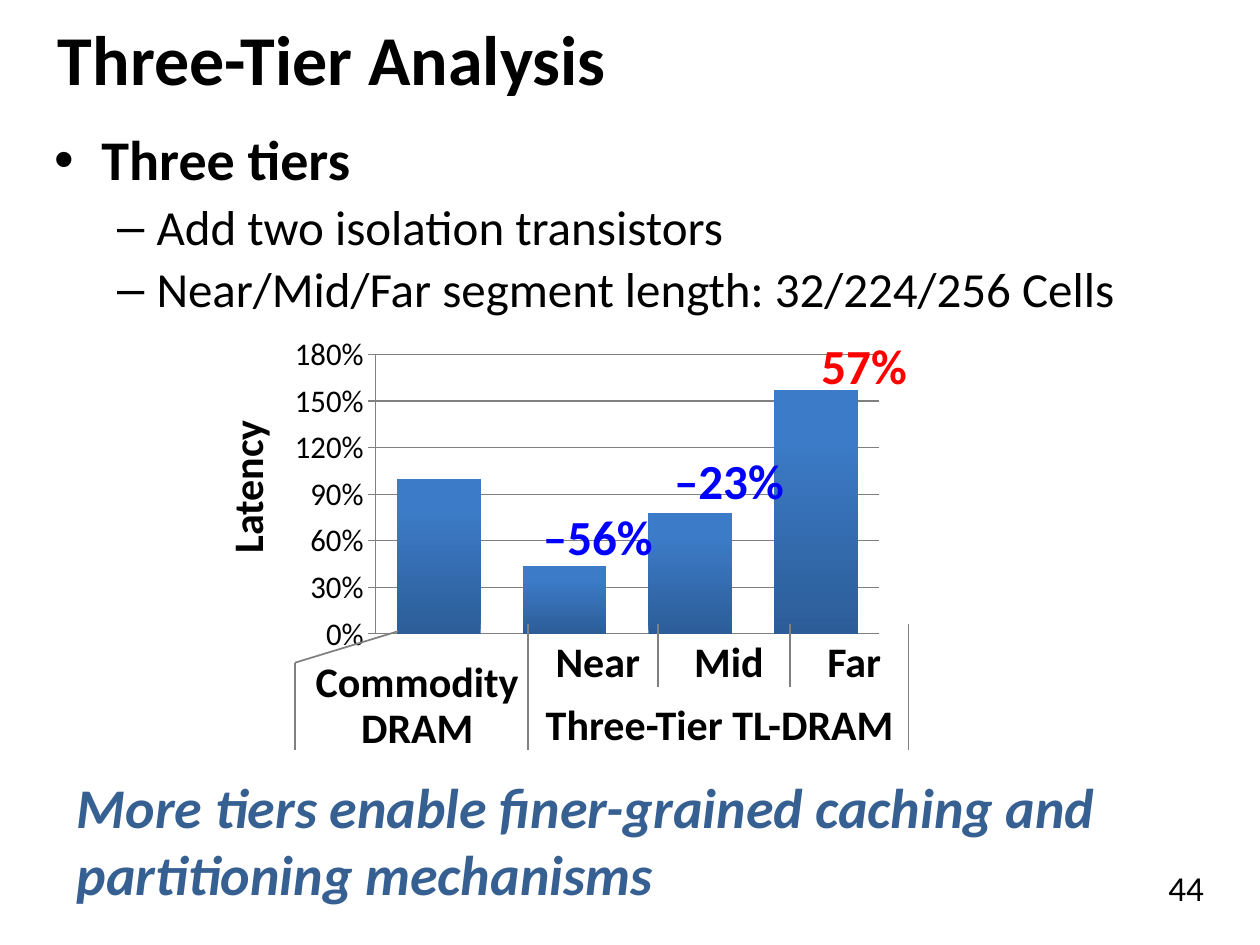
import pptx
import pptx.chart.data
import pptx.dml.color
import pptx.enum.chart
import pptx.enum.shapes
import pptx.enum.text
import pptx.oxml
import pptx.oxml.ns
import pptx.util
from pptx.util import Inches

ALIGN = pptx.enum.text.PP_ALIGN
ANCHOR = pptx.enum.text.MSO_ANCHOR
LABEL_INDENT = 0.6


def color(value):
    return pptx.dml.color.RGBColor.from_string(value)


class SlideBuilder:
    font_name = "Calibri"
    ink = "000000"
    rule = "808080"

    def __init__(self, page):
        self.page = page

    def style(self, font, size, bold=False, italic=False, ink=None):
        font.name = self.font_name
        font.size = pptx.util.Pt(size)
        font.bold = bold
        font.italic = italic
        font.color.rgb = color(ink or self.ink)

    def place(self, shape, left, top, width, height):
        shape.left, shape.top = Inches(left), Inches(top)
        shape.width, shape.height = Inches(width), Inches(height)

    def title(self, text, bounds, indent):
        shape = self.page.shapes.title
        self.place(shape, *bounds)
        frame = shape.text_frame
        frame.text = text
        frame.margin_left = Inches(indent)
        frame.vertical_anchor = ANCHOR.MIDDLE
        frame.auto_size = pptx.enum.text.MSO_AUTO_SIZE.NONE
        frame.paragraphs[0].alignment = ALIGN.LEFT
        self.style(frame.paragraphs[0].font, 40, bold=True)

    def bullets(self, items, bounds):
        """Fill the body placeholder from (level, text) pairs."""
        shape = self.page.placeholders[1]
        self.place(shape, *bounds)
        frame = shape.text_frame
        frame.text = "\n".join(text for _, text in items)
        frame.auto_size = pptx.enum.text.MSO_AUTO_SIZE.NONE
        for para, (level, _) in zip(frame.paragraphs, items):
            para.level = level
            para.line_spacing = 0.9
            self.style(para.font, 28 if level else 32, bold=level == 0)

    def text(self, text, bounds, size, align=ALIGN.LEFT, indent=0.1, right=0.1,
             spacing=None, anchor=ANCHOR.TOP, **look):
        box = self.page.shapes.add_textbox(*map(Inches, bounds))
        frame = box.text_frame
        frame.word_wrap = True
        frame.margin_left, frame.margin_right = Inches(indent), Inches(right)
        frame.vertical_anchor = anchor
        para = frame.paragraphs[0]
        para.text = text
        para.alignment = align
        para.line_spacing = spacing
        self.style(para.font, size, **look)
        return box

    def line(self, x1, y1, x2, y2):
        line = self.page.shapes.add_connector(
            pptx.enum.shapes.MSO_CONNECTOR.STRAIGHT, *map(Inches, (x1, y1, x2, y2)))
        line.line.color.rgb = color(self.rule)
        line.line.width = pptx.util.Pt(1)
        properties = line._element.spPr
        properties.append(pptx.oxml.parse_xml(
            f'<a:effectLst {pptx.oxml.ns.nsdecls("a")}/>'))

    def column_chart(self, values, bounds, plot_area):
        data = pptx.chart.data.CategoryChartData()
        data.categories = [str(number + 1) for number in range(len(values))]
        data.add_series("Series 1", values)
        chart = self.page.shapes.add_chart(
            pptx.enum.chart.XL_CHART_TYPE.COLUMN_CLUSTERED,
            *map(Inches, bounds), data).chart
        chart.has_legend = chart.has_title = False
        self.style(chart.font, 10)

        plot = chart.plots[0]
        plot.gap_width = 50
        plot.vary_by_categories = False
        fill = plot.series[0].format.fill
        fill.gradient()
        fill.gradient_angle = 90
        for stop, (position, shade) in zip(
                fill.gradient_stops, ((0, "2C5D98"), (0.8, "3C7BC7"))):
            stop.position = position
            stop.color.rgb = color(shade)

        chart.category_axis.visible = False
        axis = chart.value_axis
        axis.minimum_scale, axis.maximum_scale, axis.major_unit = 0, 1.8, 0.3
        axis.major_tick_mark = pptx.enum.chart.XL_TICK_MARK.OUTSIDE
        axis.has_major_gridlines = True
        axis.tick_labels.number_format = "0%"
        axis.tick_labels.number_format_is_linked = False
        self.style(axis.tick_labels.font, 18)
        for part in (axis, axis.major_gridlines):
            part.format.line.color.rgb = color(self.rule)
            part.format.line.width = pptx.util.Pt(0.75)
        self.set_plot_area(chart, plot_area)

    def set_plot_area(self, chart, fractions):
        """Fix the inner plot area as fractions of the chart: x, y, w, h."""
        modes = '<c:xMode val="edge"/><c:yMode val="edge"/>'
        sizes = "".join(f'<c:{tag} val="{value}"/>'
                        for tag, value in zip("xywh", fractions))
        area = chart._chartSpace.chart.plotArea
        for old in area.findall(pptx.oxml.ns.qn("c:layout")):
            area.remove(old)
        area.insert(0, pptx.oxml.parse_xml(
            f'<c:layout {pptx.oxml.ns.nsdecls("c")}><c:manualLayout>'
            f'<c:layoutTarget val="inner"/>{modes}{sizes}'
            '</c:manualLayout></c:layout>'))


def main():
    deck = pptx.Presentation()
    deck.slide_width, deck.slide_height = Inches(10), Inches(7.5)
    slide = SlideBuilder(deck.slides.add_slide(deck.slide_layouts[1]))

    slide.title("Three-Tier Analysis", (0, 0, 10, 0.92), indent=0.46)
    slide.bullets([(0, "Three tiers"),
                   (1, "Add two isolation transistors"),
                   (1, "Near/Mid/Far segment length: 32/224/256 Cells")],
                  (0.33, 1, 9.33, 1.5))
    slide.text("44", (8.83, 6.83, 1.17, 0.67), 20, ALIGN.CENTER)
    slide.text("More tiers enable finer-grained caching and partitioning mechanisms",
               (0.51, 6.08, 9.41, 1.18), 32, bold=True, italic=True, ink="376092")

    slide.column_chart((1, 0.44, 0.78, 1.57), (2.34, 2.65, 5.66, 3.05),
                       (0.092, 0.054, 0.723, 0.727))
    latency = slide.text("Latency", (0.74, 3.49, 2.43, 0.75), 24, ALIGN.CENTER,
                         anchor=ANCHOR.MIDDLE, bold=True)
    latency.rotation = 270

    for change, left, top, ink in (("–56%", 3.71, 4.02, "0000FF"),
                                   ("–23%", 4.75, 3.58, "0000FF"),
                                   ("57%", 5.92, 2.67, "FF0000")):
        slide.text(change, (left, top, 1.67, 0.42), 28, indent=LABEL_INDENT,
                   spacing=0.9, bold=True, ink=ink)

    for group, bounds in (("Commodity DRAM", (1.85, 5.2, 2.42, 0.75)),
                          ("Three-Tier TL-DRAM", (3.5, 5.54, 3.92, 0.75))):
        slide.text(group, bounds, 24, ALIGN.CENTER, indent=LABEL_INDENT,
                   spacing=0.9, bold=True)

    axis_y, tier_y, group_y, bend_y = 4.95, 5.45, 5.95, 5.26
    edges = (4.19, 5.22, 6.27, 7.21)
    for tier, left, right in zip(("Near", "Mid", "Far"), edges, edges[1:]):
        slide.text(tier, (left, 5.04, right - left, 0.42), 24, ALIGN.CENTER,
                   indent=0.08, right=0, spacing=0.9, bold=True)
    for x, bottom in zip(edges, (group_y, tier_y, tier_y, group_y)):
        slide.line(x, bottom, x, axis_y)
    slide.line(2.34, bend_y, 3.16, 5.01)
    slide.line(2.34, group_y, 2.34, bend_y)

    deck.save("out.pptx")


if __name__ == "__main__":
    main()
